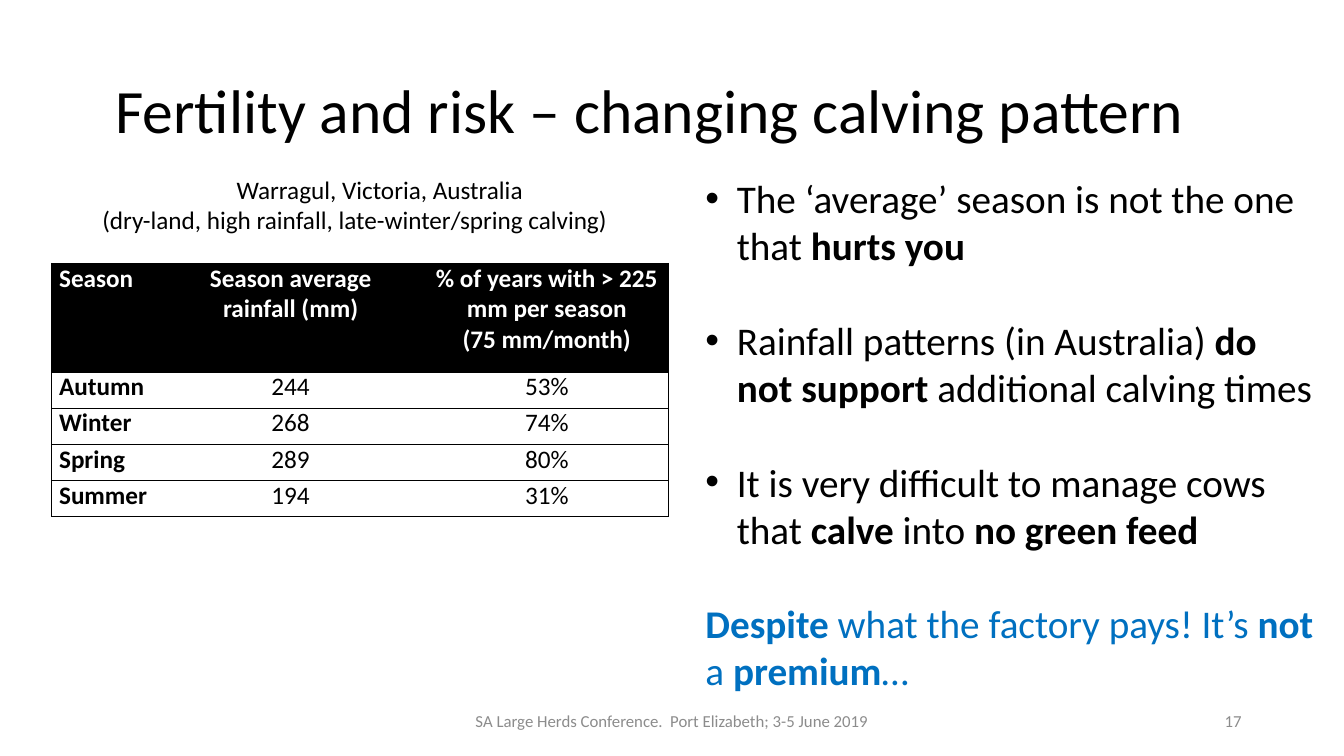
from lxml import etree
from pptx import Presentation
from pptx.dml.color import RGBColor
from pptx.enum import text
from pptx.oxml.ns import qn
from pptx.util import Cm, Pt

BLACK, WHITE, BLUE, GREY = "000000", "FFFFFF", "0070C0", "8C8C8C"
LEFT, CENTER = text.PP_ALIGN.LEFT, text.PP_ALIGN.CENTER
RIGHT, JUSTIFY = text.PP_ALIGN.RIGHT, text.PP_ALIGN.JUSTIFY
TOP, MIDDLE = text.MSO_ANCHOR.TOP, text.MSO_ANCHOR.MIDDLE

RAINFALL = [
    ("Season", "Season average\nrainfall (mm)",
     "% of years with > 225 mm per season\n(75 mm/month)"),
    ("Autumn", "244", "53%"),
    ("Winter", "268", "74%"),
    ("Spring", "289", "80%"),
    ("Summer", "194", "31%"),
]
COLUMN_WIDTHS = (2.62, 6.81, 6.1)
HEADER_HEIGHT, ROW_HEIGHT = 2.74, 0.91

POINTS = [
    "The ‘average’ season is not the one that *hurts you*",
    "Rainfall patterns (in Australia) *do not support* additional calving times",
    "It is very difficult to manage cows that *calve* into *no green feed*",
]
CONCLUSION = "*Despite* what the factory pays! It’s *not* a *premium*…"


def rgb(color):
    return RGBColor.from_string(color)


def write(para, content, size, color=BLACK, align=LEFT):
    """Fill a paragraph; parts between asterisks become bold."""
    para.alignment = align
    for index, part in enumerate(content.split("*")):
        if part:
            span = para.add_run()
            span.text = part
            font = span.font
            font.name, font.size, font.bold = "Calibri", Pt(size), index % 2 == 1
            font.color.rgb = rgb(color)


def add_box(page, left, top, width, height, anchor=TOP):
    box = page.shapes.add_textbox(Cm(left), Cm(top), Cm(width), Cm(height))
    frame = box.text_frame
    frame.word_wrap = True
    frame.vertical_anchor = anchor
    return frame


def add_bullet(para):
    properties = para._p.get_or_add_pPr()
    properties.set("marL", str(Cm(0.79)))
    properties.set("indent", str(-Cm(0.79)))
    etree.SubElement(properties, qn("a:buFont"), typeface="Arial")
    etree.SubElement(properties, qn("a:buChar"), char="•")


def set_borders(cell, visible_sides):
    properties = cell._tc.get_or_add_tcPr()
    for side in "LRTB":
        line = etree.SubElement(properties, qn("a:ln" + side), w=str(Pt(0.5)))
        if side in visible_sides:
            fill = etree.SubElement(line, qn("a:solidFill"))
            etree.SubElement(fill, qn("a:srgbClr"), val=BLACK)
        else:
            etree.SubElement(line, qn("a:noFill"))


def fill_cell(cell, content, header, first, last):
    set_borders(cell, "TB" + "L" * first + "R" * last)
    if header:
        cell.fill.solid()
        cell.fill.fore_color.rgb = rgb(BLACK)
    else:
        cell.fill.background()
    cell.margin_left = cell.margin_right = Cm(0.19)
    cell.margin_top = cell.margin_bottom = 0
    for index, line in enumerate(content.split("\n")):
        frame = cell.text_frame
        para = frame.add_paragraph() if index else frame.paragraphs[0]
        write(para, f"*{line}*" if header or first else line, 18,
              WHITE if header else BLACK, JUSTIFY if first else CENTER)


def add_rainfall_table(page):
    height = HEADER_HEIGHT + ROW_HEIGHT * (len(RAINFALL) - 1)
    table = page.shapes.add_table(
        len(RAINFALL), len(COLUMN_WIDTHS), Cm(1.3), Cm(6.63),
        Cm(sum(COLUMN_WIDTHS)), Cm(height)).table
    table.first_row = table.horz_banding = False
    for column, width in zip(table.columns, COLUMN_WIDTHS):
        column.width = Cm(width)
    for r, values in enumerate(RAINFALL):
        table.rows[r].height = Cm(ROW_HEIGHT if r else HEADER_HEIGHT)
        for c, value in enumerate(values):
            fill_cell(table.cell(r, c), value, r == 0, c == 0,
                      c == len(values) - 1)


def add_points(page):
    frame = add_box(page, 17.53, 4.27, 16, 13.41)
    for index, point in enumerate(POINTS):
        para = frame.add_paragraph() if index else frame.paragraphs[0]
        add_bullet(para)
        if index:
            para.space_before = Pt(34)
        write(para, point, 28)
    para = frame.add_paragraph()
    para.space_before = Pt(34)
    write(para, CONCLUSION, 28, BLUE)


def main():
    deck = Presentation()
    deck.slide_width, deck.slide_height = Cm(33.87), Cm(19.05)
    page = deck.slides.add_slide(deck.slide_layouts[6])

    title = add_box(page, 2.33, 1.01, 29.21, 3.68, MIDDLE)
    title.margin_right = Cm(1.35)
    title.paragraphs[0].line_spacing = 0.9
    write(title.paragraphs[0], "Fertility and risk – changing calving pattern",
          44, align=CENTER)

    add_rainfall_table(page)
    add_points(page)

    place = add_box(page, 2.33, 4.27, 14.48, 1.8)
    write(place.paragraphs[0], "Warragul, Victoria, Australia", 18, align=CENTER)
    write(place.add_paragraph(),
          "(dry-land, high rainfall, late-winter/spring calving)", 18)

    footer = add_box(page, 11.22, 17.66, 11.43, 1.01, MIDDLE)
    write(footer.paragraphs[0],
          "SA Large Herds Conference.  Port Elizabeth; 3-5 June 2019",
          12, GREY, CENTER)
    number = add_box(page, 23.92, 17.66, 7.62, 1.01, MIDDLE)
    write(number.paragraphs[0], "17", 12, GREY, RIGHT)
    deck.save("out.pptx")


if __name__ == "__main__":
    main()
